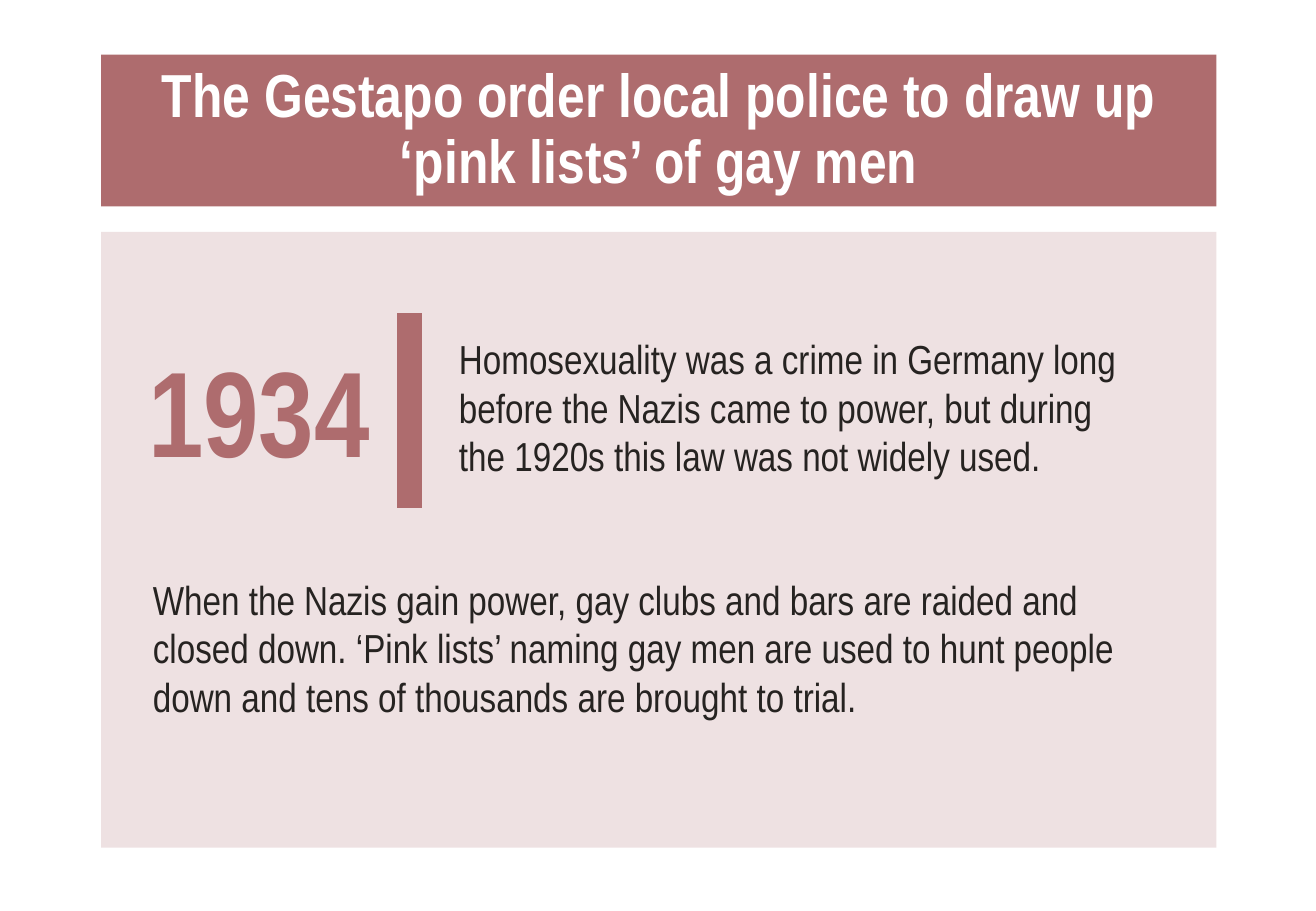
"""Build the 1934 timeline slide on a grid of 130 columns by 90 rows."""
import pptx
import pptx.dml.color
import pptx.enum.shapes
import pptx.enum.text
import pptx.oxml.ns
import pptx.util
from lxml import etree

COLS, ROWS = 130, 90
CELL = pptx.util.Inches(1 / 12)
ROSE, INK, WHITE = "AE6C6E", "262321", "FFFFFF"
LEFT, WIDTH = 10, 110.16
ALIGN = pptx.enum.text.PP_ALIGN


def grid(*cells):
    return [round(c * CELL) for c in cells]


def rgb(code):
    return pptx.dml.color.RGBColor.from_string(code)


prs = pptx.Presentation()
prs.slide_width, prs.slide_height = grid(COLS, ROWS)
s = prs.slides.add_slide(prs.slide_layouts[6])

rects = []
for top, height in ((22.92, 60.84), (5.4, 15)):
    sp = s.shapes.add_shape(pptx.enum.shapes.MSO_SHAPE.RECTANGLE, *grid(LEFT, top, WIDTH, height))
    sp.shadow.inherit = False
    sp.fill.solid()
    sp.fill.fore_color.rgb = rgb(ROSE)
    sp.line.fill.background()
    rects.append(sp)
panel, title = rects
color = panel._element.spPr.find(".//" + pptx.oxml.ns.qn("a:srgbClr"))
etree.SubElement(color, pptx.oxml.ns.qn("a:alpha"), val="20000")

bar = s.shapes.add_connector(pptx.enum.shapes.MSO_CONNECTOR.STRAIGHT, *grid(40.44, 30.96, 40.44, 50.16))
bar.line.color.rgb = rgb(ROSE)
bar.line.width = pptx.util.Pt(15)
etree.SubElement(bar._element.spPr, pptx.oxml.ns.qn("a:effectLst"))

year, law, raids = [
    s.shapes.add_textbox(*grid(*box))
    for box in ((13.44, 32.76, 26, 15.36), (44.16, 28.92, 69.96, 22.56), (13.92, 52.68, 100.2, 22.56))
]

texts = (
    (title, "The Gestapo order local police to draw up ‘pink lists’ of gay men",
     {"size": 36, "bold": True, "color": WHITE, "align": ALIGN.CENTER, "spacing": 0.9}),
    (year, "1934",
     {"size": 72, "bold": True, "color": ROSE, "align": ALIGN.LEFT, "spacing": 1.0}),
    (law, "Homosexuality was a crime in Germany long before the Nazis came to power, "
     "but during the 1920s this law was not widely used.",
     {"size": 24, "bold": False, "color": INK, "align": ALIGN.LEFT, "spacing": 1.0}),
    (raids, "When the Nazis gain power, gay clubs and bars are raided and closed down. "
     "‘Pink lists’ naming gay men are used to hunt people down and tens of thousands "
     "are brought to trial.",
     {"size": 24, "bold": False, "color": INK, "align": ALIGN.LEFT, "spacing": 1.0}),
)
for sp, text, fmt in texts:
    tf = sp.text_frame
    tf.word_wrap = True
    tf.vertical_anchor = pptx.enum.text.MSO_ANCHOR.MIDDLE
    p = tf.paragraphs[0]
    p.alignment = fmt["align"]
    p.line_spacing = fmt["spacing"]
    r = p.add_run()
    r.text = text
    font = {"name": "Arial Narrow", "size": pptx.util.Pt(fmt["size"]), "bold": fmt["bold"]}
    for key, value in font.items():
        setattr(r.font, key, value)
    r.font.color.rgb = rgb(fmt["color"])

prs.save("out.pptx")
